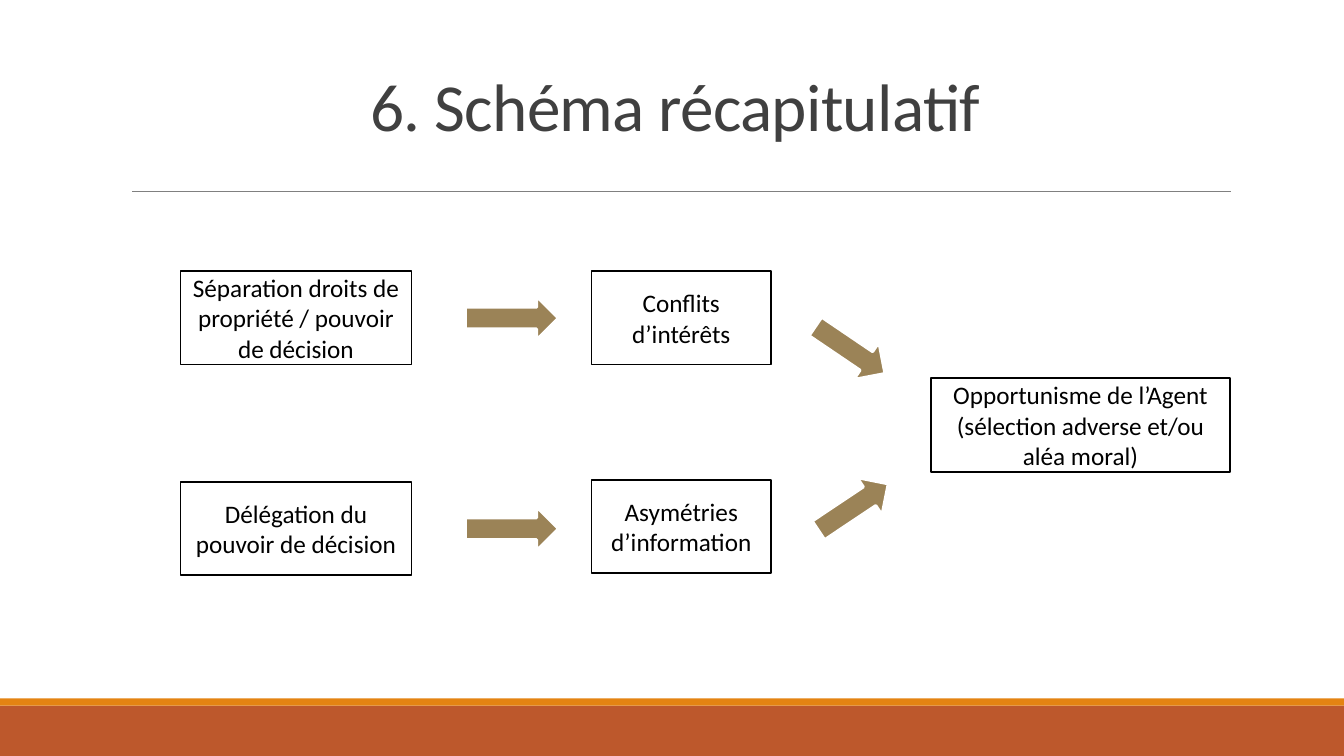
import pptx
import pptx.dml.color
import pptx.enum.shapes
import pptx.enum.text
import pptx.oxml
import pptx.util

Cm = pptx.util.Cm
Pt = pptx.util.Pt
RGBColor = pptx.dml.color.RGBColor
Shape = pptx.enum.shapes.MSO_SHAPE
Anchor = pptx.enum.text.MSO_ANCHOR

BLACK = RGBColor(0x00, 0x00, 0x00)
WHITE = RGBColor(0xFF, 0xFF, 0xFF)
TITLE_GREY = RGBColor(0x40, 0x40, 0x40)
RULE_GREY = RGBColor(0x80, 0x80, 0x80)
RUST = RGBColor(0xBD, 0x58, 0x2C)
ORANGE = RGBColor(0xE4, 0x83, 0x12)
TAN = RGBColor(0x9B, 0x83, 0x57)

SLIDE_WIDTH = 33.87
SLIDE_HEIGHT = 19.05
BOX_HEIGHT = 2.36

BANDS = [(17.78, 1.27, RUST), (17.6, 0.18, ORANGE)]
BOXES = [
    (4.55, 6.83, 5.82, "Séparation droits de propriété / pouvoir de décision"),
    (4.55, 12.14, 5.82, "Délégation du pouvoir de décision"),
    (14.91, 6.83, 4.52, "Conflits d’intérêts"),
    (14.91, 12.09, 4.52, "Asymétries d’information"),
    (23.47, 9.53, 7.52, "Opportunisme de l’Agent (sélection adverse et/ou aléa moral)"),
]
ARROWS = [
    (11.73, 12.78, 2.34, 1.09, 0),
    (20.45, 12.22, 2.11, 1.12, 326.3),
    (20.37, 8.26, 2.11, 1.12, 34.1),
    (11.73, 7.47, 2.34, 1.09, 0),
]


def apply_format(target, values):
    for name, value in values.items():
        setattr(target, name, value)


def write_text(shape, text, anchor, font_format):
    apply_format(shape.text_frame, {"word_wrap": True, "vertical_anchor": anchor})
    paragraph = shape.text_frame.paragraphs[0]
    paragraph.alignment = pptx.enum.text.PP_ALIGN.CENTER
    run = paragraph.add_run()
    run.text = text
    color = font_format["color"]
    apply_format(run.font, {"name": "Calibri", "size": font_format["size"]})
    run.font.color.rgb = color
    return paragraph, run


def add_plain_shape(slide, kind, left, top, width, height, fill=None, line=None, line_width=0):
    shape = slide.shapes.add_shape(kind, Cm(left), Cm(top), Cm(width), Cm(height))
    shape.shadow.inherit = False
    if fill is None:
        shape.fill.background()
    else:
        shape.fill.solid()
        shape.fill.fore_color.rgb = fill
    if line is None:
        shape.line.fill.background()
    else:
        shape.line.color.rgb = line
        shape.line.width = Pt(line_width)
    return shape


def add_title(slide, text):
    title = slide.shapes.add_textbox(Cm(3.05), Cm(1.27), Cm(27.94), Cm(2.51))
    paragraph, run = write_text(title, text, Anchor.BOTTOM, {"size": Pt(48), "color": TITLE_GREY})
    paragraph.line_spacing = 0.85
    run.font._element.set("spc", "-50")


def add_rule(slide):
    rule = slide.shapes.add_connector(
        pptx.enum.shapes.MSO_CONNECTOR.STRAIGHT, Cm(3.33), Cm(4.83), Cm(31.01), Cm(4.83)
    )
    rule.line.color.rgb = RULE_GREY
    rule.line.width = Pt(0.5)
    effects = pptx.oxml.parse_xml(
        '<a:effectLst xmlns:a="http://schemas.openxmlformats.org/drawingml/2006/main"/>'
    )
    rule._element.spPr.append(effects)


def add_box(slide, left, top, width, text):
    box = add_plain_shape(
        slide, Shape.RECTANGLE, left, top, width, BOX_HEIGHT, line=BLACK, line_width=1.25
    )
    write_text(box, text, Anchor.MIDDLE, {"size": Pt(18), "color": BLACK})


def add_arrow(slide, left, top, width, height, rotation):
    arrow = add_plain_shape(
        slide, Shape.RIGHT_ARROW, left, top, width, height, TAN, WHITE, 2
    )
    arrow.rotation = rotation


def main():
    presentation = pptx.Presentation()
    apply_format(
        presentation, {"slide_width": Cm(SLIDE_WIDTH), "slide_height": Cm(SLIDE_HEIGHT)}
    )
    slide = presentation.slides.add_slide(presentation.slide_layouts[6])
    for top, height, color in BANDS:
        add_plain_shape(slide, Shape.RECTANGLE, 0, top, SLIDE_WIDTH, height, color)
    add_rule(slide)
    add_title(slide, "6. Schéma récapitulatif")
    for box in BOXES:
        add_box(slide, *box)
    for arrow in ARROWS:
        add_arrow(slide, *arrow)
    presentation.save("out.pptx")


if __name__ == "__main__":
    main()
